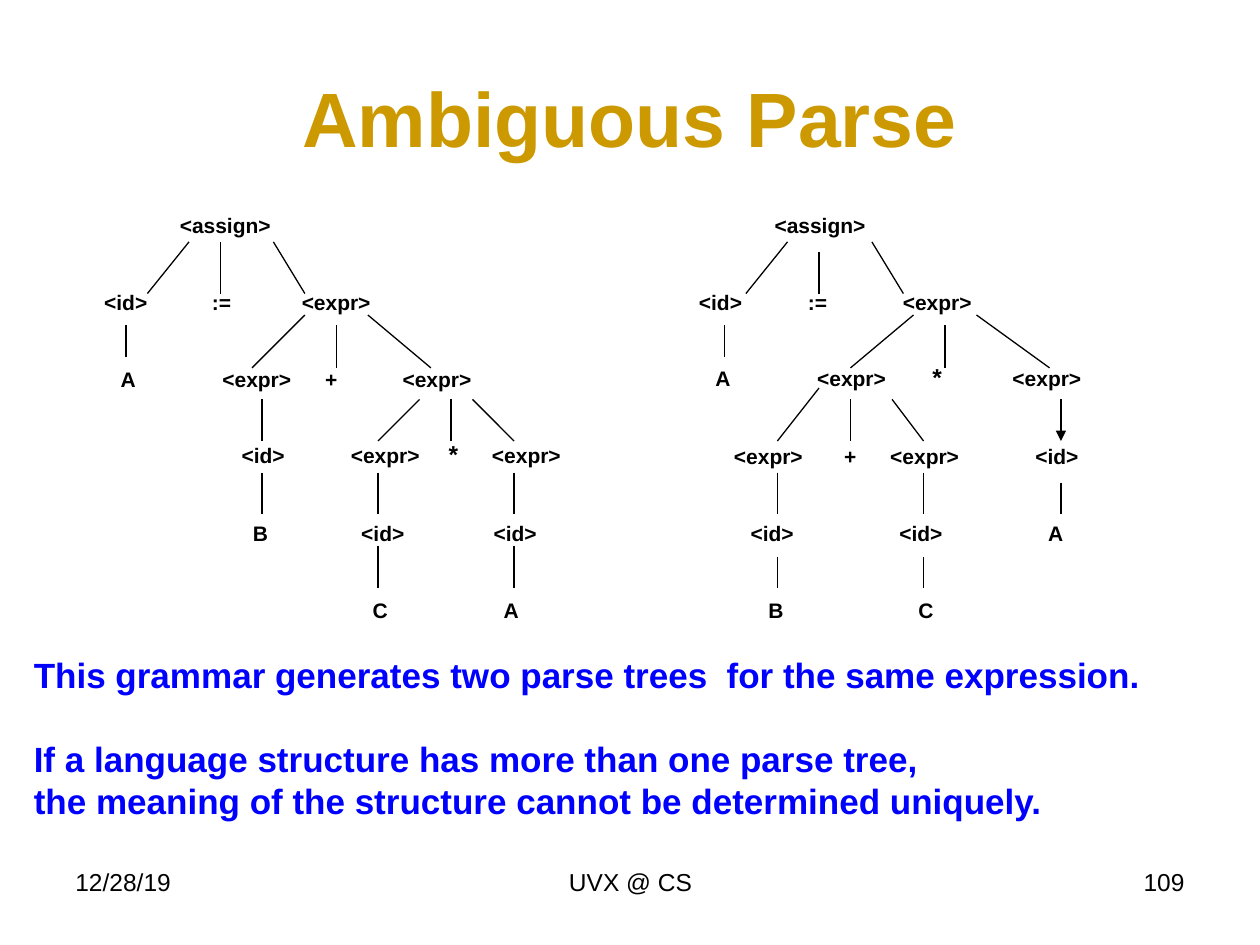
"""Build the slide that compares two parse trees of one ambiguous expression."""
from lxml.etree import SubElement
from pptx import Presentation
from pptx.dml.color import RGBColor
from pptx.enum.shapes import MSO_CONNECTOR
from pptx.enum.text import MSO_ANCHOR, PP_ALIGN
from pptx.oxml.ns import qn
from pptx.util import Inches, Pt

COLORS = {"title": "CC9900", "message": "0000FF", "ink": "000000"}

LEFT_TREE = [
    [("<assign>", 1.79)],
    [("<id>", 1), (":=", 1.76), ("<expr>", 2.67)],
    [("A", 1.02), ("<expr>", 2.04), ("+", 2.63), ("<expr>", 3.47)],
    [("<id>", 2.09), ("<expr>", 3.06), ("*", 3.6), ("<expr>", 4.18)],
    [("B", 2.07), ("<id>", 3.04), ("<id>", 4.09)],
    [("C", 3.02), ("A", 4.06)],
]
RIGHT_TREE = [
    [("<assign>", 6.51)],
    [("<id>", 5.72), (":=", 6.49), ("<expr>", 7.44)],
    [("A", 5.74), ("<expr>", 6.76), ("*", 7.44), ("<expr>", 8.31)],
    [("<expr>", 6.1), ("+", 6.75), ("<expr>", 7.34), ("<id>", 8.39)],
    [("<id>", 6.13), ("<id>", 7.31), ("A", 8.38)],
    [("B", 6.16), ("C", 7.35)],
]
BRANCHES = [
    (1.5, 1.92, 1.17, 2.33), (1.75, 1.92, 1.75, 2.33), (2.17, 1.92, 2.42, 2.33),
    (1, 2.58, 1, 2.83),
    (2.42, 2.5, 2, 2.92), (2.67, 2.58, 2.67, 2.92), (2.92, 2.5, 3.42, 2.92),
    (2.08, 3.17, 2.08, 3.5), (2.08, 3.75, 2.08, 4.08),
    (3.33, 3.17, 3, 3.5), (3.58, 3.17, 3.58, 3.5), (3.75, 3.17, 4.08, 3.5),
    (3, 3.75, 3, 4.08), (3, 4.33, 3, 4.67),
    (4.08, 3.75, 4.08, 4.08), (4.08, 4.33, 4.08, 4.67),
    (6.25, 1.92, 5.92, 2.33), (6.5, 2, 6.5, 2.33), (6.92, 1.92, 7.17, 2.33),
    (5.75, 2.58, 5.75, 2.83),
    (7.25, 2.5, 6.75, 2.92), (7.5, 2.58, 7.5, 2.92), (7.75, 2.5, 8.33, 2.92),
    (6.5, 3.08, 6.17, 3.5), (6.75, 3.17, 6.75, 3.5), (7.08, 3.17, 7.33, 3.5),
    (6.17, 3.75, 6.17, 4.08), (6.17, 4.42, 6.17, 4.67),
    (7.33, 3.75, 7.33, 4.08), (7.33, 4.42, 7.33, 4.67),
    (8.42, 3.83, 8.42, 4.08),
]
ARROW = (8.42, 3.17, 8.42, 3.5)


def style(span, size, color, bold):
    span.font.name = "Arial"
    span.font.size = Pt(size)
    span.font.bold = bold
    span.font.color.rgb = RGBColor.from_string(COLORS[color])


def add_text(left, top, width, height, text, size, color, bold, align):
    box = page.shapes.add_textbox(*map(Inches, (left, top, width, height)))
    box.text_frame.word_wrap = True
    box.text_frame.text = text
    for para in box.text_frame.paragraphs:
        para.alignment = align
        for span in para.runs:
            style(span, size, color, bold)
    return box.text_frame


deck = Presentation()
deck.slide_width, deck.slide_height = Inches(10), Inches(7.5)
page = deck.slides.add_slide(deck.slide_layouts[6])

title = add_text(0.5, 0.3, 9, 1.25, "Ambiguous Parse", 44, "title", True, PP_ALIGN.CENTER)
title.vertical_anchor = MSO_ANCHOR.MIDDLE

for left, width, text, align in [
    (0.5, 2.33, "12/28/19", PP_ALIGN.LEFT),
    (3.42, 3.17, "UVX @ CS", PP_ALIGN.CENTER),
    (7.17, 2.33, "109", PP_ALIGN.RIGHT),
]:
    add_text(left, 6.83, width, 0.52, text, 14, "ink", False, align)

message = add_text(
    0.17, 5.14, 9.17, 1.45,
    "This grammar generates two parse trees  for the same expression.\n"
    "If a language structure has more than one parse tree,\v"
    "the meaning of the structure cannot be determined uniquely.",
    20, "message", True, PP_ALIGN.LEFT)
for para in message.paragraphs:
    para.line_spacing = Pt(24)
message.paragraphs[1].space_before = Pt(24)

for left, width, rows in [(0.5, 4.07, LEFT_TREE), (5.22, 3.48, RIGHT_TREE)]:
    tree = add_text(left, 1.58, width, 3.43, "\n" * (len(rows) - 1), 12, "ink", True, PP_ALIGN.LEFT)
    tree.margin_top, tree.margin_right = Inches(0.11), 0
    for index, (para, row) in enumerate(zip(tree.paragraphs, rows)):
        para.line_spacing = Pt(14.4)
        para.space_before = Pt(29.5 if index else 0)
        tabs = SubElement(para._p.get_or_add_pPr(), qn("a:tabLst"))
        for label, center in row:
            position = Inches(center - left - 0.1)
            SubElement(tabs, qn("a:tab"), pos=str(position), algn="ctr")
            span = para.add_run()
            span.text = "\t" + label
            style(span, 14 if label == "*" else 12, "ink", True)

for ends in BRANCHES + [ARROW]:
    branch = page.shapes.add_connector(MSO_CONNECTOR.STRAIGHT, *map(Inches, ends))
    branch.line.width = Pt(0.75)
    branch.line.color.rgb = RGBColor.from_string(COLORS["ink"])
    if ends == ARROW:
        SubElement(branch.line._get_or_add_ln(), qn("a:tailEnd"), type="triangle")
    SubElement(branch._element.spPr, qn("a:effectLst"))

deck.save("out.pptx")
